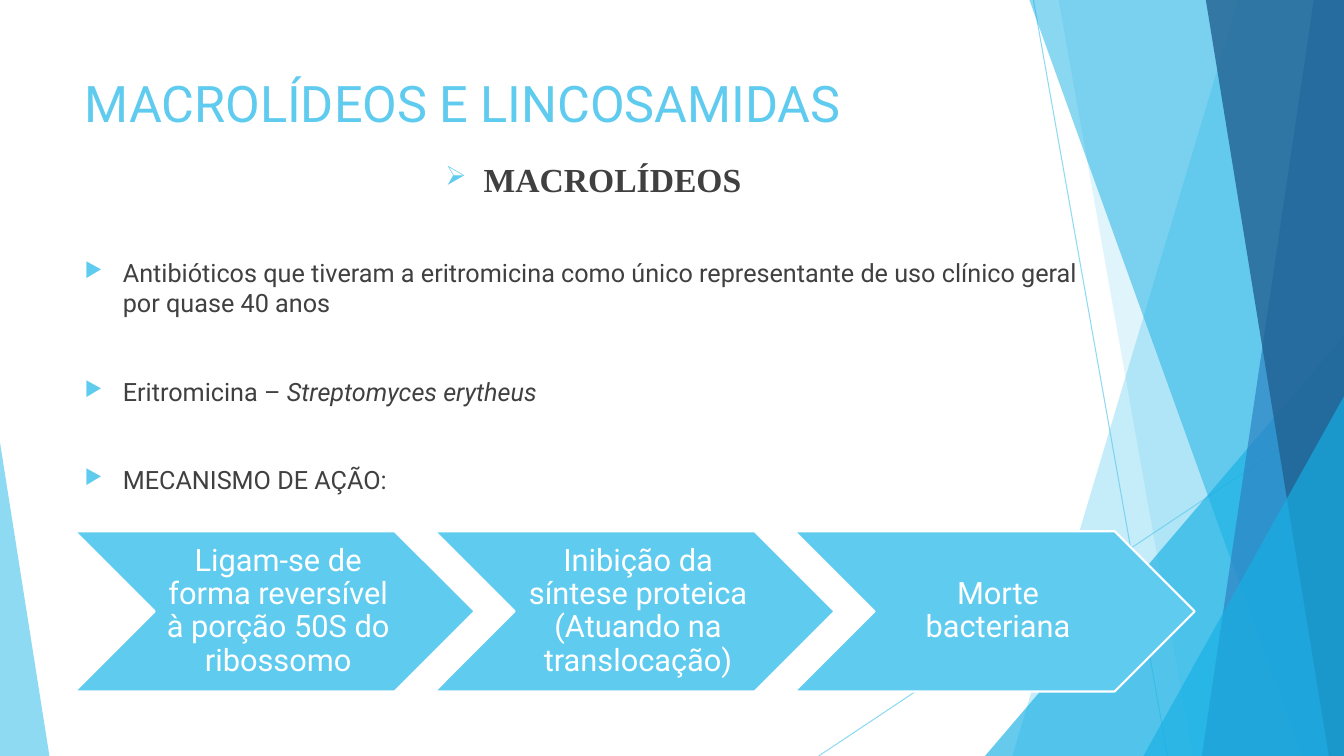
from dataclasses import dataclass

from lxml.etree import SubElement
from pptx import Presentation
from pptx.dml.color import RGBColor
from pptx.enum.shapes import MSO_CONNECTOR, MSO_SHAPE
from pptx.enum.text import MSO_ANCHOR, PP_ALIGN
from pptx.oxml.ns import qn
from pptx.slide import Slide
from pptx.text.text import Font
from pptx.util import Inches, Pt


@dataclass(frozen=True)
class Theme:
    sky: str = "5FCBEF"
    cyan: str = "17B0E4"
    blue: str = "2E83C3"
    navy: str = "226292"
    ink: str = "404040"
    white: str = "FFFFFF"
    sans: str = "Roboto"
    serif: str = "Times New Roman"
    title: int = 36
    head: int = 24
    step: int = 22
    body: int = 18


@dataclass(frozen=True)
class Ray:
    start: tuple[float, float]
    end: tuple[float, float]


@dataclass(frozen=True)
class Band:
    """Facet that runs from a slanted left edge to the slide's right edge."""
    top: float
    base: float
    color: str
    alpha: int


@dataclass(frozen=True)
class Wedge:
    """Triangle that stands on the slide's lower edge."""
    left: float
    width: float
    height: float
    peak: float
    color: str
    alpha: int


@dataclass(frozen=True)
class Point:
    text: str
    latin: str = ""
    head: bool = False


THEME = Theme()
WIDE, HIGH = 13.33, 7.5

RAYS = [Ray((10.25, 0), (11.58, HIGH)), Ray((WIDE, 4.03), (8.12, HIGH))]
FACETS = [
    Band(12.28, 10.04, THEME.sky, 36),
    Band(10.5, 11.83, THEME.sky, 20),
    Wedge(9.77, 3.56, 4.17, 1, THEME.cyan, 66),
    Band(10.21, 12.91, THEME.cyan, 50),
    Band(13.03, 11.92, THEME.blue, 70),
    Band(11.96, 13.18, THEME.navy, 80),
    Wedge(11.34, 1.99, 3.57, 1, THEME.cyan, 66),
    Wedge(0, 0.49, 3.11, 0, THEME.sky, 70),
]
POINTS = [
    Point("MACROLÍDEOS", head=True),
    Point("Antibióticos que tiveram a eritromicina como único representante "
          "de uso clínico geral por quase 40 anos"),
    Point("Eritromicina – ", latin="Streptomyces erytheus"),
    Point("MECANISMO DE AÇÃO:"),
]
STEPS = [
    "Ligam-se de forma reversível à porção 50S do ribossomo",
    "Inibição da síntese proteica (Atuando na translocação)",
    "Morte bacteriana",
]


def style(font: Font, size: int, color: str, name: str = THEME.sans) -> None:
    font.size, font.name = Pt(size), name
    font.color.rgb = RGBColor.from_string(color)


def fade(shape, alpha: int) -> None:
    for color in shape.element.spPr.iter(qn("a:srgbClr")):
        SubElement(color, qn("a:alpha"), val=str(alpha * 1000))


def paint(shape, color: str, alpha: int) -> None:
    shape.shadow.inherit = False
    shape.fill.solid()
    shape.fill.fore_color.rgb = RGBColor.from_string(color)
    shape.line.fill.background()
    fade(shape, alpha)


def draw_ray(slide: Slide, ray: Ray) -> None:
    ends = [Inches(v) for v in (*ray.start, *ray.end)]
    line = slide.shapes.add_connector(MSO_CONNECTOR.STRAIGHT, *ends)
    line.line.width = Pt(0.75)
    line.line.color.rgb = RGBColor.from_string(THEME.sky)
    fade(line, 70)
    SubElement(line.element.spPr, qn("a:effectLst"))


def draw_band(slide: Slide, band: Band) -> None:
    edge = [(WIDE, 0), (WIDE, HIGH), (band.base, HIGH)]
    form = slide.shapes.build_freeform(Inches(band.top), 0)
    form.add_line_segments([(Inches(x), Inches(y)) for x, y in edge], close=True)
    paint(form.convert_to_shape(), band.color, band.alpha)


def draw_wedge(slide: Slide, wedge: Wedge) -> None:
    shape = slide.shapes.add_shape(
        MSO_SHAPE.ISOSCELES_TRIANGLE, Inches(wedge.left),
        Inches(HIGH - wedge.height), Inches(wedge.width), Inches(wedge.height))
    shape.adjustments[0] = wedge.peak
    paint(shape, wedge.color, wedge.alpha)


def add_mark(para, mark: str) -> None:
    indent = Inches(0.38)
    props = para._p.get_or_add_pPr()
    props.set("marL", str(indent))
    props.set("indent", str(-indent))
    tint = SubElement(props, qn("a:buClr"))
    SubElement(tint, qn("a:srgbClr"), val=THEME.sky)
    SubElement(props, qn("a:buSzPct"), val="80000")
    SubElement(props, qn("a:buChar"), char=mark)


def draw_title(slide: Slide) -> None:
    title = slide.shapes.title
    title.left, title.top = Inches(0.74), Inches(0.67)
    title.width, title.height = Inches(9.4), Inches(1.44)
    frame = title.text_frame
    frame.text = "MACROLÍDEOS E LINCOSAMIDAS"
    frame.vertical_anchor = MSO_ANCHOR.TOP
    para = frame.paragraphs[0]
    para.alignment = PP_ALIGN.LEFT
    style(para.runs[0].font, THEME.title, THEME.sky)


def draw_points(slide: Slide) -> None:
    box = slide.shapes.add_textbox(
        Inches(0.74), Inches(1.53), Inches(10.29), Inches(3.7))
    frame = box.text_frame
    frame.word_wrap = True
    for i, point in enumerate(POINTS):
        para = frame.add_paragraph() if i else frame.paragraphs[0]
        para.text = point.text
        para.space_before = Pt(41.5 if i else 10)
        add_mark(para, "➢" if point.head else "▶")
        font = para.runs[0].font
        if point.head:
            para.alignment = PP_ALIGN.CENTER
            style(font, THEME.head, THEME.ink, THEME.serif)
            font.bold = True
        else:
            style(font, THEME.body, THEME.ink)
        if point.latin:
            run = para.add_run()
            run.text = point.latin
            style(run.font, THEME.body, THEME.ink)
            run.font.italic = True


def draw_step(slide: Slide, text: str, left: float) -> None:
    shape = slide.shapes.add_shape(
        MSO_SHAPE.CHEVRON, Inches(left), Inches(5.27), Inches(3.97), Inches(1.59))
    paint(shape, THEME.sky, 100)
    shape.line.color.rgb = RGBColor.from_string(THEME.white)
    shape.line.width = Pt(1.5)
    frame = shape.text_frame
    frame.word_wrap = True
    frame.vertical_anchor = MSO_ANCHOR.MIDDLE
    frame.margin_left = Inches(0.1)
    frame.margin_top = frame.margin_right = frame.margin_bottom = Inches(0.03)
    frame.text = text
    para = frame.paragraphs[0]
    para.alignment, para.line_spacing = PP_ALIGN.CENTER, 0.9
    style(para.runs[0].font, THEME.step, THEME.white)


def main() -> None:
    deck = Presentation()
    deck.slide_width, deck.slide_height = Inches(WIDE), Inches(HIGH)
    slide = deck.slides.add_slide(deck.slide_layouts.get_by_name("Title Only"))

    # Faceted backdrop
    for ray in RAYS:
        draw_ray(slide, ray)
    for facet in FACETS:
        if isinstance(facet, Band):
            draw_band(slide, facet)
        else:
            draw_wedge(slide, facet)

    # Title and bullets
    draw_title(slide)
    draw_points(slide)

    # Mechanism chain
    for i, text in enumerate(STEPS):
        draw_step(slide, text, 0.74 + i * 3.57)
    deck.save("out.pptx")


if __name__ == "__main__":
    main()
